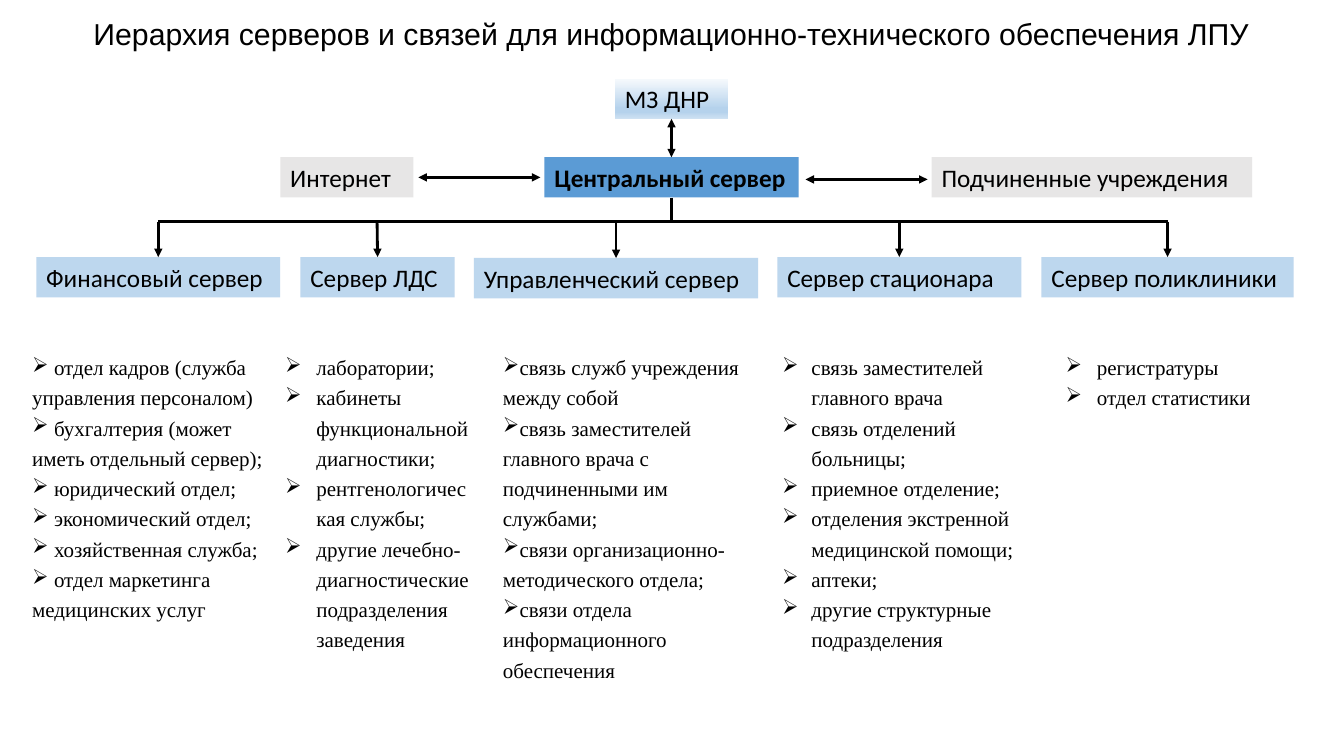
from lxml.etree import SubElement
from pptx import Presentation
from pptx.dml.color import RGBColor
from pptx.enum.shapes import MSO_CONNECTOR, MSO_SHAPE
from pptx.enum.text import MSO_ANCHOR, MSO_AUTO_SIZE, PP_ALIGN
from pptx.oxml.ns import qn
from pptx.util import Emu, Pt

PX = 9144
BLACK = RGBColor(0x00, 0x00, 0x00)
BLUE = RGBColor(0x5B, 0x9B, 0xD5)
PALE_BLUE = RGBColor(0xBD, 0xD7, 0xEE)
GRAY = RGBColor(0xE7, 0xE6, 0xE6)
MIST = RGBColor(0xF7, 0xFA, 0xFD)
SKY = RGBColor(0xB5, 0xD2, 0xEC)
HAZE = RGBColor(0xCE, 0xE1, 0xF2)
MINISTRY_STOPS = [(0, MIST), (74, SKY), (83, SKY), (100, HAZE)]

BOX_HEIGHT = 40
BUS_Y = 220
LIST_TOP = 342

SERVERS = [
    ("Финансовый сервер", 36, 255, 242),
    ("Сервер ЛДС", 298, 255, 153),
    ("Управленческий сервер", 470, 256, 282),
    ("Сервер стационара", 771, 255, 242),
    ("Сервер поликлиники", 1033, 255, 250),
]
DEPARTMENTS = [
    (22, 251, 308, 0, [
        " отдел кадров (служба управления персоналом)",
        " бухгалтерия (может иметь отдельный сервер);",
        " юридический отдел;",
        " экономический отдел;",
        " хозяйственная служба;",
        " отдел маркетинга медицинских услуг",
    ]),
    (273, 202, 338, 31, [
        "лаборатории;",
        "кабинеты функциональной диагностики;",
        "рентгенологическая службы;",
        "другие лечебно-диагностические подразделения заведения",
    ]),
    (489, 263, 369, 0, [
        "связь служб учреждения между собой",
        "связь заместителей главного врача с подчиненными им службами;",
        "связи организационно-методического отдела;",
        "связи отдела информационного обеспечения",
    ]),
    (766, 252, 338, 29, [
        "связь заместителей главного врача",
        "связь отделений больницы;",
        "приемное отделение;",
        "отделения экстренной медицинской помощи;",
        "аптеки;",
        "другие структурные подразделения",
    ]),
    (1047, 222, 101, 31, ["регистратуры", "отдел статистики"]),
]


def px(*lengths):
    """Turn px lengths into EMU."""
    return [Emu(length * PX) for length in lengths]


def write_text(frame, lines, font="Calibri", size=18, bold=False, align=PP_ALIGN.LEFT,
               spacing=1.0, bullet=None, indent=0, anchor=MSO_ANCHOR.TOP,
               fit=MSO_AUTO_SIZE.SHAPE_TO_FIT_TEXT):
    """Fill a text frame with one paragraph per line."""
    frame.word_wrap = True
    frame.auto_size = fit
    frame.vertical_anchor = anchor
    for number, line in enumerate(lines):
        paragraph = frame.add_paragraph() if number else frame.paragraphs[0]
        paragraph.alignment = align
        paragraph.line_spacing = spacing
        run = paragraph.add_run()
        run.text = line
        run.font.name = font
        run.font.size = Pt(size)
        run.font.bold = bold
        run.font.color.rgb = BLACK
        if bullet:
            properties = paragraph._p.get_or_add_pPr()
            properties.set("marL", str(indent * PX))
            properties.set("indent", str(-indent * PX))
            SubElement(properties, qn("a:buChar")).set("char", bullet)


class ServerDiagram:
    """Style and current slide of the server hierarchy."""

    def __init__(self, slide, line_width=2):
        self.shapes = slide.shapes
        self.line_width = Pt(line_width)

    def text(self, left, top, width, height, lines, **style):
        """Add a text box."""
        area = self.shapes.add_textbox(*px(left, top, width, height))
        write_text(area.text_frame, lines, **style)

    def box(self, label, left, top, width, color, bold=False):
        """Add a labelled rectangle."""
        node = self.shapes.add_shape(MSO_SHAPE.RECTANGLE, *px(left, top, width, BOX_HEIGHT))
        node.shadow.inherit = False
        node.fill.solid()
        node.fill.fore_color.rgb = color
        node.line.fill.background()
        write_text(node.text_frame, [label], bold=bold)
        return node

    def shade(self, node, stops):
        """Give a box a top-down gradient."""
        node.fill.gradient()
        node.fill.gradient_angle = 270
        stop_list = node._element.spPr.find(qn("a:gradFill")).find(qn("a:gsLst"))
        for old_stop in list(stop_list):
            stop_list.remove(old_stop)
        for percent, color in stops:
            stop = SubElement(stop_list, qn("a:gs"), pos=str(percent * 1000))
            SubElement(stop, qn("a:srgbClr"), val=str(color))

    def link(self, x1, y1, x2, y2, start=None, end=None, heads=()):
        """Add a straight line, joined to (box, side) pairs where given."""
        link = self.shapes.add_connector(MSO_CONNECTOR.STRAIGHT, *px(x1, y1, x2, y2))
        if start:
            link.begin_connect(*start)
        if end:
            link.end_connect(*end)
        link.line.color.rgb = BLACK
        link.line.width = self.line_width
        outline = link.line._get_or_add_ln()
        for head in heads:
            SubElement(outline, qn(f"a:{head}"), type="triangle")
        SubElement(link._element.spPr, qn("a:effectLst"))


def main():
    """Build the slide and save it."""
    presentation = Presentation()
    presentation.slide_width, presentation.slide_height = px(1333, 750)
    diagram = ServerDiagram(presentation.slides.add_slide(presentation.slide_layouts[6]))
    both_ends = ("headEnd", "tailEnd")

    diagram.text(64, 18, 1204, 35,
                 ["Иерархия серверов и связей для информационно-технического обеспечения ЛПУ"],
                 font="Arial", size=21.6, align=PP_ALIGN.CENTER, spacing=0.9,
                 anchor=MSO_ANCHOR.MIDDLE, fit=MSO_AUTO_SIZE.NONE)

    central = diagram.box("Центральный сервер", 540, 156, 252, BLUE, bold=True)
    ministry = diagram.box("МЗ ДНР", 610, 78, 112, SKY)
    diagram.shade(ministry, MINISTRY_STOPS)
    diagram.box("Интернет", 278, 156, 132, GRAY)
    diagram.box("Подчиненные учреждения", 924, 156, 318, GRAY)

    diagram.link(415, 176, 536, 176, heads=both_ends)
    diagram.link(799, 178, 920, 178, heads=both_ends)
    diagram.link(666, 118, 666, 156, (ministry, 2), (central, 0), both_ends)
    diagram.link(666, 196, 666, BUS_Y, start=(central, 2))

    centers = [left + width // 2 for _, left, _, width in SERVERS]
    diagram.link(centers[0], BUS_Y, centers[-1], BUS_Y)
    for center, (label, left, top, width) in zip(centers, SERVERS):
        server = diagram.box(label, left, top, width, PALE_BLUE)
        diagram.link(center, BUS_Y, center, top, end=(server, 0), heads=("tailEnd",))

    for left, width, height, indent, departments in DEPARTMENTS:
        diagram.text(left, LIST_TOP, width, height, departments, font="Times New Roman",
                     size=15, spacing=1.2, bullet="➢", indent=indent)

    presentation.save("out.pptx")


if __name__ == "__main__":
    main()
